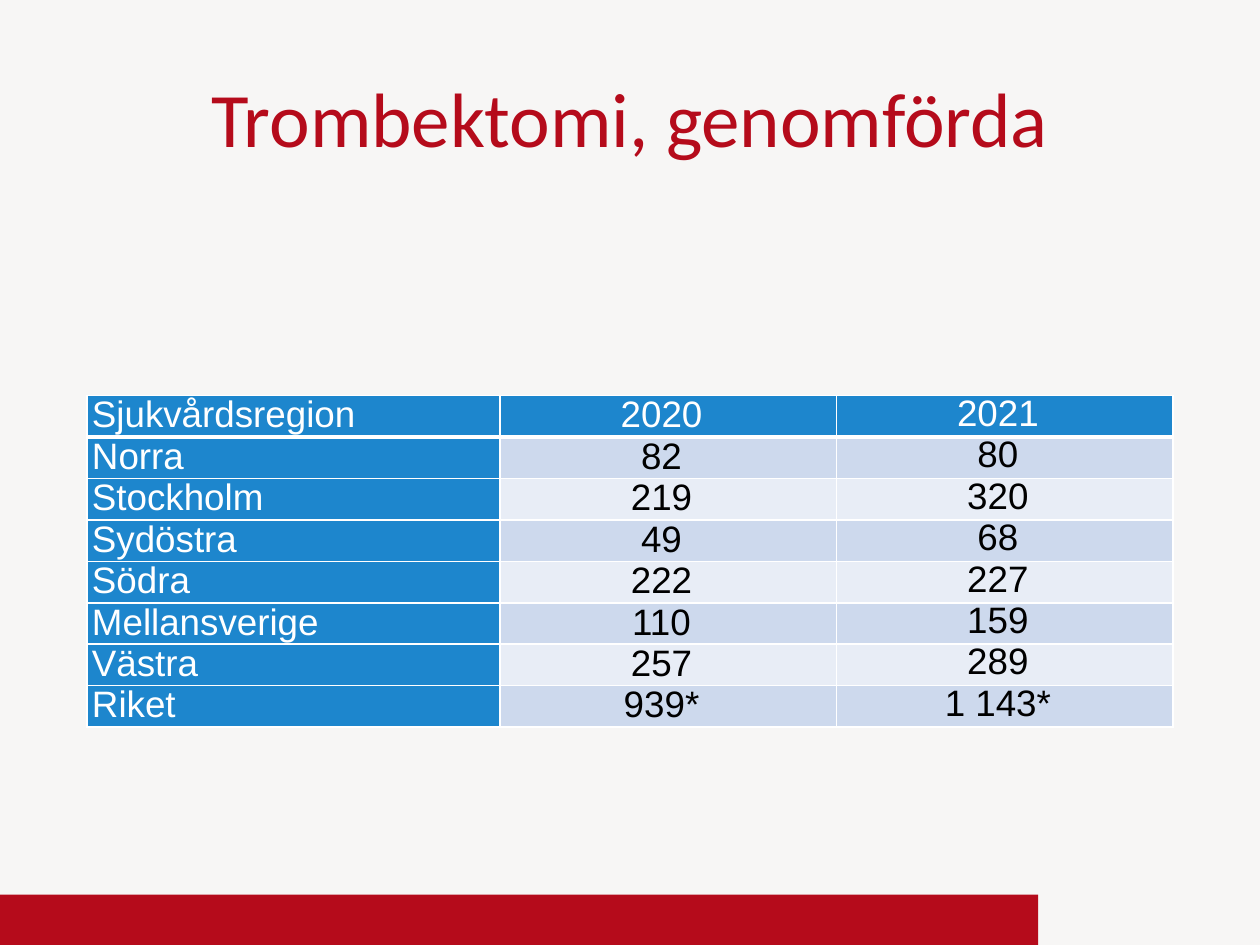
from pptx import Presentation
from pptx.dml.color import RGBColor
from pptx.enum.shapes import MSO_SHAPE
from pptx.enum.text import MSO_ANCHOR, PP_ALIGN
from pptx.oxml import parse_xml
from pptx.oxml.ns import nsdecls
from pptx.util import Inches, Pt

RECTANGLE = MSO_SHAPE.RECTANGLE
TOP, MIDDLE = MSO_ANCHOR.TOP, MSO_ANCHOR.MIDDLE
LEFT, CENTER = PP_ALIGN.LEFT, PP_ALIGN.CENTER
TITLE_ONLY = 5

PAPER, RED, BLUE = "F7F6F5", "B50B1B", "1D86CD"
WHITE, BLACK = "FFFFFF", "000000"
BANDS = ("CDD9ED", "E8EDF6")

COLUMN_WIDTHS = (3.28, 2.67, 2.67)
TABLE_HEIGHT = 2.63
REGIONS = (
    ("Sjukvårdsregion", "2020", "2021"),
    ("Norra", "82", "80"),
    ("Stockholm", "219", "320"),
    ("Sydöstra", "49", "68"),
    ("Södra", "222", "227"),
    ("Mellansverige", "110", "159"),
    ("Västra", "257", "289"),
    ("Riket", "939*", "1 143*"),
)


def rgb(code):
    return RGBColor.from_string(code)


def paint(fill, color):
    fill.solid()
    fill.fore_color.rgb = rgb(color)


def add_text(para, text, font, size, color, align):
    para.alignment = align
    span = para.add_run()
    span.text = text
    span.font.name = font
    span.font.size = Pt(size)
    span.font.bold = False
    span.font.color.rgb = rgb(color)


def add_footer_bar(page):
    bar = page.shapes.add_shape(
        RECTANGLE, Inches(0), Inches(7.1), Inches(8.24), Inches(0.4))
    bar.shadow.inherit = False
    paint(bar.fill, RED)
    bar.line.fill.background()


def set_title(page, text):
    title = page.shapes.title
    title.left, title.top = Inches(0.5), Inches(0.3)
    title.width, title.height = Inches(9), Inches(1.25)
    frame = title.text_frame
    frame.vertical_anchor = MIDDLE
    add_text(frame.paragraphs[0], text, "Calibri", 44, RED, CENTER)


def set_borders(cell, bottom_width):
    # Borders come before the fill in the cell properties
    properties = cell._tc.get_or_add_tcPr()
    widths = {"lnL": 1, "lnR": 1, "lnT": 1, "lnB": bottom_width}
    for place, (tag, width) in enumerate(widths.items()):
        properties.insert(place, parse_xml(
            f'<a:{tag} {nsdecls("a")} w="{Pt(width)}"><a:solidFill>'
            f'<a:srgbClr val="{WHITE}"/></a:solidFill></a:{tag}>'))


def fill_cell(cell, text, row, column):
    heading = row == 0 or column == 0
    paint(cell.fill, BLUE if heading else BANDS[(row - 1) % 2])
    set_borders(cell, 3 if row == 0 else 1)
    cell.margin_left = cell.margin_right = Inches(0.04)
    cell.margin_top = cell.margin_bottom = 0
    cell.vertical_anchor = TOP if column == 2 else MIDDLE
    para = cell.text_frame.paragraphs[0]
    para.line_spacing = 0.94
    para.space_after = Pt(14)
    # Hanging indent, with a wider right margin
    indents = para._p.get_or_add_pPr()
    indents.set("marL", str(Inches(0.01)))
    indents.set("indent", str(Inches(-0.01)))
    indents.set("marR", str(Inches(0.11)))
    add_text(para, text, "Arial", 21, WHITE if heading else BLACK,
             LEFT if column == 0 else CENTER)


def add_region_table(page):
    table = page.shapes.add_table(
        len(REGIONS), len(COLUMN_WIDTHS), Inches(0.69), Inches(3.14),
        Inches(sum(COLUMN_WIDTHS)), Inches(TABLE_HEIGHT)).table
    for column, width in zip(table.columns, COLUMN_WIDTHS):
        column.width = Inches(width)
    for row, values in enumerate(REGIONS):
        for column, text in enumerate(values):
            fill_cell(table.cell(row, column), text, row, column)


def main():
    deck = Presentation()
    deck.slide_width, deck.slide_height = Inches(10), Inches(7.5)
    page = deck.slides.add_slide(deck.slide_layouts[TITLE_ONLY])
    paint(page.background.fill, PAPER)
    add_footer_bar(page)
    set_title(page, "Trombektomi, genomförda")
    add_region_table(page)
    deck.save("out.pptx")


if __name__ == "__main__":
    main()
